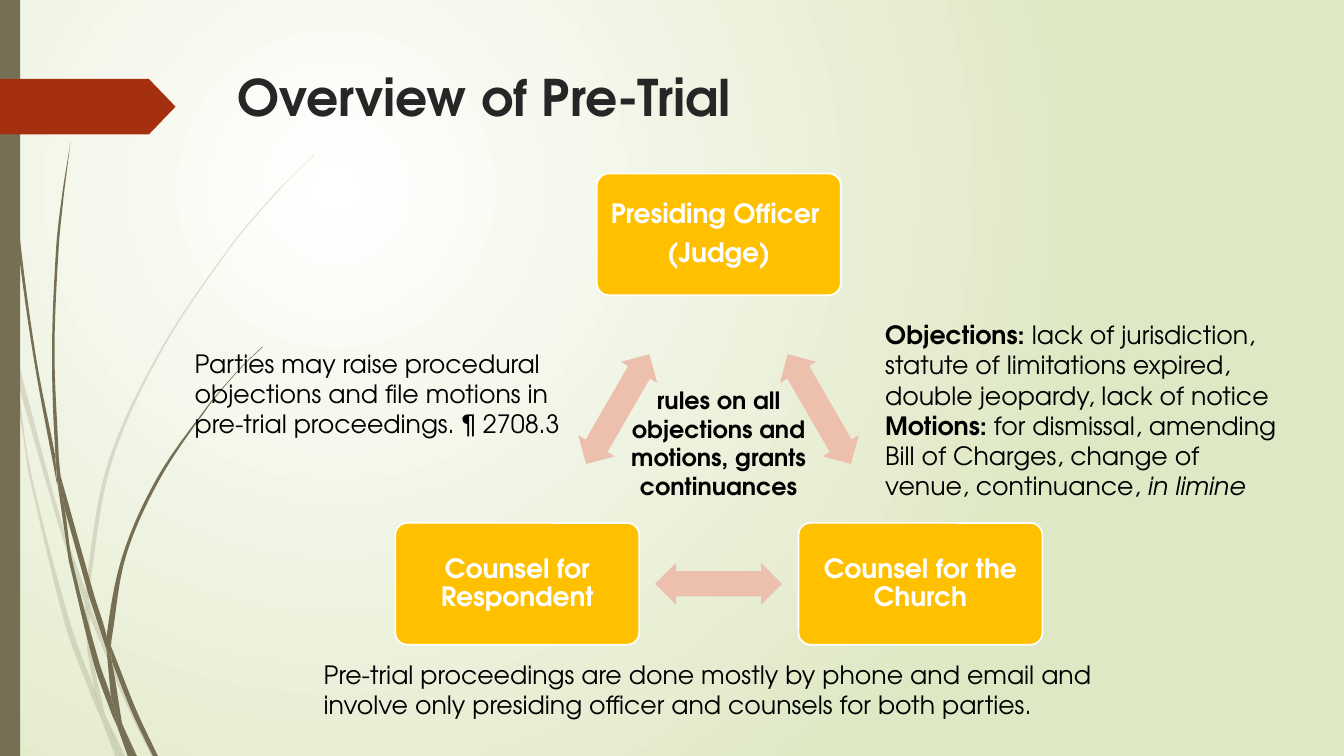
from math import dist
from typing import NamedTuple

from lxml.etree import SubElement
from pptx import Presentation
from pptx.dml.color import RGBColor
from pptx.enum.shapes import MSO_SHAPE as SHAPE
from pptx.enum.text import MSO_ANCHOR as ANCHOR, PP_ALIGN as ALIGN
from pptx.oxml.ns import qn
from pptx.shapes.autoshape import Shape
from pptx.slide import Slide
from pptx.text.text import TextFrame
from pptx.util import Inches, Pt

# The slide is a grid of 160 columns by 90 rows; one cell is 1/12 inch.
CELL = Inches(1) / 12
COLS, ROWS = 160, 90
FONT = "TeX Gyre Adventor"
WHITE = RGBColor(0xFF, 0xFF, 0xFF)
BLACK = RGBColor(0x00, 0x00, 0x00)
CHARCOAL = RGBColor(0x26, 0x26, 0x26)
PALE_GREEN = RGBColor(0xDF, 0xE8, 0xC4)
OLIVE = RGBColor(0x76, 0x6F, 0x54)
RUST = RGBColor(0xA5, 0x30, 0x10)
AMBER = RGBColor(0xFF, 0xC0, 0x00)
PEACH = RGBColor(0xEC, 0xC0, 0xAC)
Side = list[tuple[float, float]]


class Area(NamedTuple):
    col: float
    row: float
    cols: float
    rows: float


class Span(NamedTuple):
    text: str
    bold: bool = False
    italic: bool = False


class Note(NamedTuple):
    area: Area
    paragraphs: list[list[Span]]
    size: float = 18
    align: ALIGN = ALIGN.LEFT
    color: RGBColor = BLACK


class Party(NamedTuple):
    col: float
    row: float
    lines: list[str]


class Arrow(NamedTuple):
    col: float
    row: float
    angle: float


class Blade(NamedTuple):
    """A piece of grass: one side down, the other side back up."""
    down: Side
    up: Side


PALE_GRASS = [
    Blade([(0, 33.8), (1.1, 38.6), (1.3, 42)], [(1.2, 41.3), (0, 35.9)]),
    Blade([(1.7, 41.4), (7.4, 62.4), (10.2, 70.3)], [(10.1, 71.9), (7, 62.6), (2, 45.1)]),
    Blade([(10.6, 71.5), (11, 72.8), (15.2, 83), (18.6, 90)], [(18, 90), (14.8, 83.3), (10.6, 73.2)]),
    Blade([(12.6, 85.3), (14.9, 90)], [(14.3, 90)]),
    Blade([(1.3, 42), (2, 45.1), (3.7, 56.3), (8.4, 74.3), (11.2, 82), (11.9, 84.8), (12.1, 85.7)],
          [(11, 83.2), (7.8, 74.5), (3.4, 56.4)]),
    Blade([(10.1, 71.9), (10.6, 73), (10.9, 77.5), (12.4, 84.7), (12.6, 85.3)],
          [(11.5, 83), (11.2, 82), (10.4, 77.5)]),
    Blade([(37.4, 18.4), (34.7, 21), (32.2, 23.6), (27.4, 29.3), (19, 41.8), (12.8, 55.3),
           (10.2, 70.1), (10.6, 71.5)],
          [(10.6, 70.1), (13.2, 55.4), (19.2, 41.9), (27.5, 29.4), (32.2, 23.8), (34.8, 21), (37.4, 18.5)]),
    Blade([(12.1, 85.7), (14.3, 90)], [(13.7, 90)]),
    Blade([(10.2, 70.3), (10.6, 71.5), (10.6, 73.2)], [(10.6, 73), (10.1, 71.9)]),
    Blade([(11.2, 82), (11.5, 83), (12.6, 85.3), (14.3, 90)], [(12.1, 85.7), (11.9, 84.8)]),
]
DARK_GRASS = [
    Blade([(0.4, 0), (0.5, 5.8), (0.8, 13.2), (2, 28), (4, 42.6), (6.7, 57.2), (6.8, 57.7)],
          [(6.6, 54.8), (6.6, 54.4), (4.3, 42.6), (2.3, 27.8), (1, 13.1), (0.6, 5.8), (0.5, 0)]),
    Blade([(7.2, 56.6), (11.2, 70.8), (12.7, 75.7), (12.7, 77.4)], [(10.6, 71), (7.7, 60.6)]),
    Blade([(13.2, 76.9), (13.6, 77.9), (16.3, 84.7), (18.8, 90)], [(18.2, 90), (15.8, 85), (13.3, 78.7)]),
    Blade([(6.8, 57.2), (7.7, 60.6), (8.6, 66.7), (11.8, 78.8), (13.2, 82.9), (13.9, 86), (14, 86.6)],
          [(13.3, 85), (11.2, 79.1), (8.2, 66.8)]),
    Blade([(8.4, 16.9), (7.4, 23.2), (6.7, 29.4), (6.2, 41.9), (6.6, 53.9), (7.2, 56.6)],
          [(7, 54.4), (6.5, 41.9), (7, 29.4), (7.6, 23.2)]),
    Blade([(14.6, 86.3), (16.3, 90)], [(16, 90)]),
    Blade([(6.6, 53.9), (7.2, 56.6), (7.7, 60.6)], [(6.8, 57.2), (6.6, 54.4)]),
    Blade([(31.2, 41.3), (29.4, 43), (27.7, 44.8), (24.5, 48.6), (18.7, 56.9), (14.6, 66.1),
           (12.7, 75.7), (13.2, 76.9)],
          [(13.3, 76), (15, 66.2), (19, 57.1), (24.6, 48.7), (27.7, 44.9), (29.4, 43.1), (31.3, 41.3)]),
    Blade([(14, 86.6), (15.7, 90)], [(15.2, 90)]),
    Blade([(12.7, 77.4), (13.3, 78.7), (14.5, 85.9), (14.6, 86.3)], [(13.9, 84.7), (13.2, 82.9)]),
    Blade([(12.7, 75.7), (13.2, 76.9), (13.3, 78.7)], [(13.1, 78.1), (12.7, 77.4)]),
    Blade([(13.2, 82.9), (13.9, 84.7), (14.6, 86.3), (16, 90)], [(15.6, 90), (14, 86.6), (13.9, 86)]),
]
PARTIES = [Party(71.05, 20.65, ["Presiding Officer ", "(Judge)"]),
           Party(95.05, 62.25, ["Counsel for the Church"]),
           Party(47.05, 62.25, ["Counsel for Respondent"])]
ARROWS = [Arrow(90, 46.2, 60), Arrow(78, 67, 180), Arrow(66, 46.2, 300)]
NOTES = [
    Note(Area(27.1, 7.25, 117, 16.8), [[Span("Overview of Pre-Trial", True)]], 36, color=CHARCOAL),
    Note(Area(22, 40.85, 46.3, 12.1), [[Span(
        "Parties may raise procedural objections and file motions in pre-trial proceedings. ¶ 2708.3")]]),
    Note(Area(104.2, 37.45, 50.3, 23), [
        [Span("Objections:", True),
         Span(" lack of jurisdiction, statute of limitations expired, double jeopardy, lack of notice")],
        [Span("Motions:", True),
         Span(" for dismissal, amending Bill of Charges, change of venue, continuance, "),
         Span("in limine", italic=True)]]),
    Note(Area(72.6, 45.35, 25.9, 15), [[Span(
        "rules on all objections and motions, grants continuances", True)]], 17, ALIGN.CENTER),
    Note(Area(37.35, 77.9, 96.5, 8.5), [[Span(
        "Pre-trial proceedings are done mostly by phone and email and "
        "involve only presiding officer and counsels for both parties.")]]),
]


def emu(cells: tuple[float, ...]) -> list[int]:
    return [round(n * CELL) for n in cells]


def paint(sp: Shape, color: RGBColor) -> None:
    sp.shadow.inherit = False
    sp.fill.solid()
    sp.fill.fore_color.rgb = color
    sp.line.fill.background()


def add_preset(s: Slide, kind: SHAPE, area: Area, color: RGBColor, *adjust: float) -> Shape:
    sp = s.shapes.add_shape(kind, *emu(area))
    paint(sp, color)
    for i, value in enumerate(adjust):
        sp.adjustments[i] = value
    return sp


def paint_background(s: Slide) -> None:
    fill = s.background.fill
    fill.gradient()
    for stop, color in zip(fill.gradient_stops, (WHITE, PALE_GREEN)):
        stop.color.rgb = color
    grad = s._element.find(".//" + qn("a:gradFill"))
    grad.remove(grad.find(qn("a:lin")))
    circle = SubElement(grad, qn("a:path"), {"path": "circle"})
    SubElement(circle, qn("a:fillToRect"), l="50000", t="50000", r="100000", b="100000")


def bend(side: Side) -> list[Side]:
    """Two control points and an end point for each step along a side."""
    ends = [side[0], *side, side[-1]]
    curves = []
    for a, b, c, d in zip(ends, ends[1:], ends[2:], ends[3:]):
        out, back = (dist(b, c) / 3 / dist(*pair) for pair in ((a, c), (b, d)))
        curves.append([(b[0] + (c[0] - a[0]) * out, b[1] + (c[1] - a[1]) * out),
                       (c[0] - (d[0] - b[0]) * back, c[1] - (d[1] - b[1]) * back), c])
    return curves


def add_blade(s: Slide, blade: Blade, opacity: int) -> None:
    outline = [emu(knot) for knot in blade.down + blade.up]
    builder = s.shapes.build_freeform(*outline[0])
    builder.add_line_segments(outline[1:])
    sp = builder.convert_to_shape()
    paint(sp, OLIVE)
    steps = sp._element.findall(".//" + qn("a:lnTo"))
    turn = len(blade.down) - 1
    for step, curve in zip(steps[:turn] + steps[turn + 1:], bend(blade.down) + bend(blade.up)):
        step.tag = qn("a:cubicBezTo")
        step.remove(step[0])
        for x, y in map(emu, curve):
            SubElement(step, qn("a:pt"), x=str(x - sp.left), y=str(y - sp.top))
    rgb = sp._element.spPr.find(qn("a:solidFill")).find(qn("a:srgbClr"))
    SubElement(rgb, qn("a:alpha"), val=str(opacity * 1000))


def write(tf: TextFrame, note: Note) -> None:
    tf.word_wrap = True
    for i, spans in enumerate(note.paragraphs):
        p = tf.add_paragraph() if i else tf.paragraphs[0]
        p.alignment = note.align
        p.font.name, p.font.size, p.font.color.rgb = FONT, Pt(note.size), note.color
        for span in spans:
            r = p.add_run()
            r.text, r.font.bold, r.font.italic = span.text, span.bold, span.italic


def add_party(s: Slide, party: Party) -> None:
    area = Area(party.col, party.row, 29.05, 14.5)
    sp = add_preset(s, SHAPE.ROUNDED_RECTANGLE, area, AMBER, 0.1)
    sp.line.color.rgb, sp.line.width = WHITE, Pt(1.25)
    tf = sp.text_frame
    tf.margin_left = tf.margin_right = tf.margin_top = tf.margin_bottom = round(CELL)
    tf.vertical_anchor = ANCHOR.MIDDLE
    write(tf, Note(area, [[Span(line, True)] for line in party.lines], 19, ALIGN.CENTER, WHITE))
    for p in tf.paragraphs:
        p.line_spacing, p.space_after = 0.9, Pt(6.65)


prs = Presentation()
prs.slide_width, prs.slide_height = emu((COLS, ROWS))
s = prs.slides.add_slide(prs.slide_layouts[6])
paint_background(s)
for grass, opacity in ((PALE_GRASS, 20), (DARK_GRASS, 100)):
    for blade in grass:
        add_blade(s, blade, opacity)
add_preset(s, SHAPE.RECTANGLE, Area(0, 0, 2.4, ROWS), OLIVE)
add_preset(s, SHAPE.PENTAGON, Area(0, 9.4, 20.9, 6.6), RUST, 0.48)
for party in PARTIES:
    add_party(s, party)
for arrow in ARROWS:
    sp = add_preset(s, SHAPE.LEFT_RIGHT_ARROW, Area(arrow.col, arrow.row, 15.1, 5), PEACH, 0.6, 0.5)
    sp.rotation = arrow.angle
for note in NOTES:
    write(s.shapes.add_textbox(*emu(note.area)).text_frame, note)
prs.save("out.pptx")
